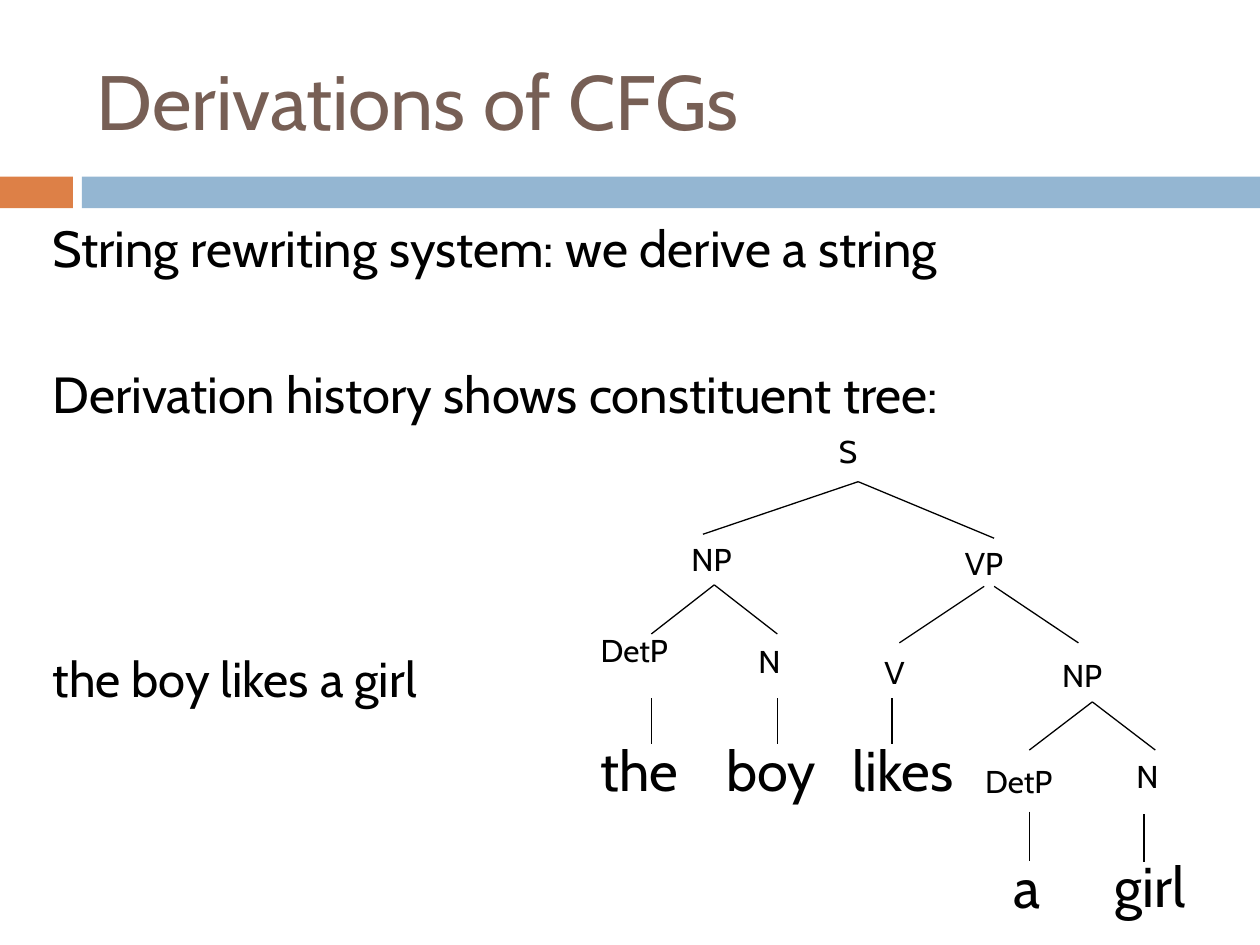
import pptx
import pptx.util
import pptx.dml.color
import pptx.enum.shapes
import pptx.enum.text
import pptx.oxml.ns
import lxml.etree

Cm = pptx.util.Cm
RGBColor = pptx.dml.color.RGBColor

BLACK = RGBColor(0x00, 0x00, 0x00)
BROWN = RGBColor(0x77, 0x5F, 0x55)
ORANGE = RGBColor(0xDD, 0x80, 0x47)
BLUE = RGBColor(0x94, 0xB6, 0xD2)
FONT = "Cabin"

LABELS = [
    ("S", 4.8, 0, 0.99), ("NP", 1.83, 2.18, 1.55), ("VP", 7.34, 2.26, 1.5),
    ("DetP", 0, 4.01, 2.29), ("N", 3.18, 4.22, 1.07), ("V", 5.72, 4.45, 1.02),
    ("NP", 9.3, 4.52, 1.55), ("DetP", 7.75, 6.65, 2.29), ("N", 10.8, 6.55, 1.07),
]
WORDS = [
    ("the", 0, 6.12, 2.11), ("boy", 2.54, 6.12, 2.31), ("likes", 5.08, 6.12, 2.69),
    ("a", 8.33, 8.48, 1.09), ("girl", 10.36, 8.46, 2.06),
]
BRANCHES = [
    (5.44, 1.12, 2.31, 2.18), (5.44, 1.12, 8.18, 2.26),
    (2.54, 3.2, 1.27, 4.19), (2.54, 3.2, 3.81, 4.19),
    (7.98, 3.23, 6.27, 4.37), (8.18, 3.23, 9.88, 4.37),
    (10.16, 5.56, 8.89, 6.53), (10.16, 5.56, 11.43, 6.53),
    (1.27, 5.49, 1.27, 6.4), (3.81, 5.49, 3.81, 6.4), (6.12, 5.49, 6.12, 6.4),
    (8.89, 7.77, 8.89, 8.76), (11.2, 7.82, 11.2, 8.79),
]


def add_text(page, box, text, size, color=BLACK, wrap=False, middle=False, gaps=()):
    """Place the lines of text in a box, with optional space before each."""
    shape = page.shapes.add_textbox(*map(Cm, box))
    frame = shape.text_frame
    frame.word_wrap = wrap
    if not wrap:
        frame.auto_size = pptx.enum.text.MSO_AUTO_SIZE.SHAPE_TO_FIT_TEXT
    if middle:
        frame.vertical_anchor = pptx.enum.text.MSO_ANCHOR.MIDDLE
    frame.text = text
    for para in frame.paragraphs:
        for span in para.runs:
            span.font.name = FONT
            span.font.size = pptx.util.Pt(size)
            span.font.color.rgb = color
    for para, gap in zip(frame.paragraphs, gaps):
        para.space_before = pptx.util.Pt(gap)


def add_bar(page, box, color):
    """Draw a plain filled rectangle."""
    bar = page.shapes.add_shape(
        pptx.enum.shapes.MSO_SHAPE.RECTANGLE, *map(Cm, box))
    bar.shadow.inherit = False
    bar.fill.solid()
    bar.fill.fore_color.rgb = color
    bar.line.fill.background()


def add_branch(page, ends):
    """Draw a thin black line between two points."""
    branch = page.shapes.add_connector(
        pptx.enum.shapes.MSO_CONNECTOR.STRAIGHT, *map(Cm, ends))
    branch.line.color.rgb = BLACK
    branch.line.width = pptx.util.Pt(0.75)
    lxml.etree.SubElement(
        branch._element.spPr, pptx.oxml.ns.qn("a:effectLst"))


def add_header(page, left, top, width, height):
    """Place the title above a two-coloured band."""
    band_top, band_height = top + height - 0.64, 0.64
    add_bar(page, (left, band_top, 1.47, band_height), ORANGE)
    add_bar(page, (left + 1.65, band_top, width - 1.65, band_height), BLUE)
    add_text(page, (left + 1.7, top + 0.64, 22.66, 2.74),
             "Derivations of CFGs", 44, color=BROWN, wrap=True, middle=True)


def add_body(page, left, top, width, height):
    """Place the two statements and the derived sentence."""
    statements = ("String rewriting system: we derive a string\n"
                  "Derivation history shows constituent tree:")
    add_text(page, (left, top, width, 4.88), statements, 29,
             wrap=True, gaps=(7, 49))
    add_text(page, (left, top + height - 1.45, 8.51, 1.45),
             "the boy likes a girl", 28)


def add_tree(page, left, top):
    """Draw the constituent tree from its top left corner."""
    for x1, y1, x2, y2 in BRANCHES:
        add_branch(page, (left + x1, top + y1, left + x2, top + y2))
    for nodes, size, height in ((LABELS, 18, 1.27), (WORDS, 32, 1.6)):
        for text, x, y, width in nodes:
            add_text(page, (left + x, top + y, width, height), text, size)


def main():
    """Build and save the deck."""
    deck = pptx.Presentation()
    deck.slide_width, deck.slide_height = Cm(25.4), Cm(19.05)
    page = deck.slides.add_slide(deck.slide_layouts[6])
    add_header(page, 0, 0, 25.4, 4.2)
    add_body(page, 0.81, 4.24, 23.55, 10.16)
    add_tree(page, 11.86, 8.59)
    deck.save("out.pptx")


if __name__ == "__main__":
    main()
